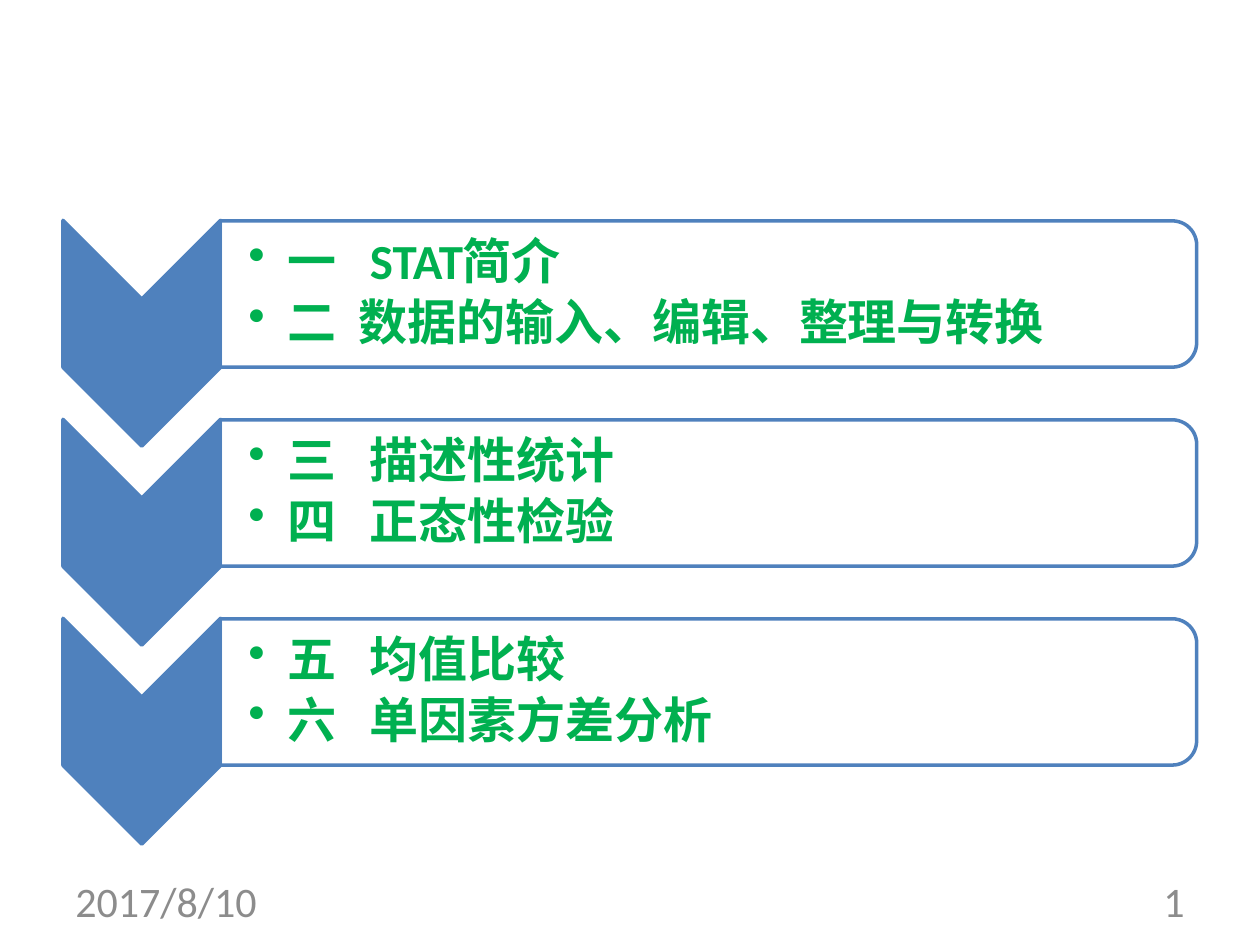
from lxml import etree
from pptx import Presentation, util as u
from pptx.dml.color import RGBColor
from pptx.enum import shapes, text
from pptx.oxml import ns

Pt = u.Pt
hues = {"blue": "4F81BD", "white": "FFFFFF", "green": "00B050", "gray": "8C8C8C"}


def write(par, words, size=28, hue="green", bold=False, gap=0):
    run = par.add_run()
    run.text = words
    font = run.font
    font.name, font.size, font.bold = "Calibri", Pt(size), bold
    font.color.rgb = RGBColor.from_string(hues[hue])
    if gap:
        run._r.get_or_add_rPr().set("spc", str(int(gap * 100)))


def turned(kind, mid, top, wide, high, hue):
    shape = slide.shapes.add_shape(
        kind, Pt(mid - wide / 2), Pt(top - high / 2), Pt(wide), Pt(high))
    shape.rotation = 90
    shape.shadow.inherit = False
    shape.fill.solid()
    shape.fill.fore_color.rgb = RGBColor.from_string(hues[hue])
    shape.line.color.rgb = RGBColor.from_string(hues["blue"])
    shape.line.width = Pt(2)
    return shape


deck = Presentation()
deck.slide_width, deck.slide_height = Pt(720), Pt(540)
slide = deck.slides.add_slide(deck.slide_layouts[6])

parts = [
    [("一", "STAT简介", 6.3), ("二", "数据的输入、编辑、整理与转换", 3.1)],
    [("三", "描述性统计", 6.3), ("四", "正态性检验", 6.3)],
    [("五", "均值比较", 6.3), ("六", "单因素方差分析", 6.3)],
]
step = 113.7

for row, items in enumerate(parts):
    down = row * step
    turned(shapes.MSO_SHAPE.CHEVRON, 81, 190.4 + down, 129, 90, "blue")
    panel = turned(shapes.MSO_SHAPE.ROUND_2_SAME_RECTANGLE,
                   404.8, 168 + down, 83.6, 558, "white")
    color = panel._element.spPr.find(".//" + ns.qn("a:srgbClr"))
    etree.SubElement(color, ns.qn("a:alpha"), val="90000")

    box = slide.shapes.add_textbox(Pt(126), Pt(130.3 + down), Pt(553.7), Pt(75.6))
    frame = box.text_frame
    frame.word_wrap = True
    frame.vertical_anchor = text.MSO_ANCHOR.MIDDLE
    frame.margin_left = Pt(16)
    frame.margin_top = frame.margin_right = frame.margin_bottom = Pt(1.4)
    for spot, (mark, words, gap) in enumerate(items):
        par = frame.add_paragraph() if spot else frame.paragraphs[0]
        par.level = 1
        props = par._p.get_or_add_pPr()
        props.set("marL", str(Pt(22.5)))
        props.set("indent", str(-Pt(22.5)))
        etree.SubElement(props, ns.qn("a:buChar"), char="•")
        par.line_spacing = 0.9
        par.space_after = Pt(4.2)
        write(par, mark + " ", bold=True, gap=gap)
        write(par, words, bold=True)

for left, words, side in [
    (36, "2017/8/10", text.PP_ALIGN.LEFT),
    (516, "1", text.PP_ALIGN.RIGHT),
]:
    box = slide.shapes.add_textbox(Pt(left), Pt(500.5), Pt(168), Pt(28.75))
    frame = box.text_frame
    frame.word_wrap = True
    frame.vertical_anchor = text.MSO_ANCHOR.MIDDLE
    par = frame.paragraphs[0]
    par.alignment = side
    write(par, words, size=24, hue="gray")

deck.save("out.pptx")
